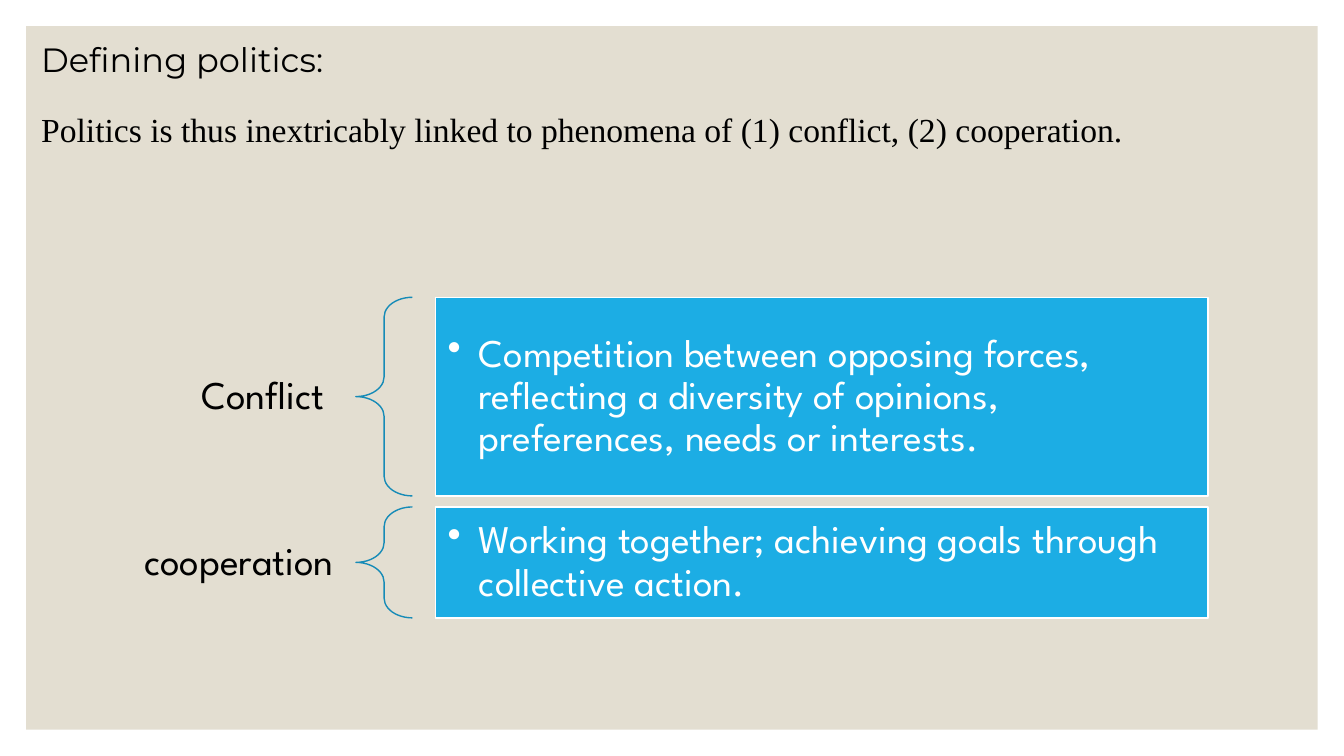
from dataclasses import dataclass

from lxml import etree
from pptx import Presentation
from pptx.dml.color import RGBColor
from pptx.enum.shapes import MSO_SHAPE
from pptx.enum.text import MSO_ANCHOR, PP_ALIGN
from pptx.oxml.ns import qn
from pptx.util import Inches, Pt

RECTANGLE, BRACE = MSO_SHAPE.RECTANGLE, MSO_SHAPE.LEFT_BRACE
MIDDLE, TOP = MSO_ANCHOR.MIDDLE, MSO_ANCHOR.TOP
LEFT, RIGHT = PP_ALIGN.LEFT, PP_ALIGN.RIGHT

TITLE = "Defining politics:"
STATEMENT = ("Politics is thus inextricably linked to phenomena of "
             "(1) conflict, (2) cooperation.")
# term, definition, row height in inches
DEFINITIONS = [
    ("Conflict ", "Competition between opposing forces, reflecting a diversity "
     "of opinions, preferences, needs or interests.", 1.97),
    ("cooperation", "Working together; achieving goals through collective action.", 1.1),
]


@dataclass(frozen=True)
class Theme:
    panel: str = "E3DED1"
    box: str = "1CADE4"
    brace: str = "168BB7"
    dark: str = "000000"
    light: str = "FFFFFF"
    title_font: str = "Montserrat"
    statement_font: str = "Times New Roman"
    list_font: str = "League Spartan"
    heading_size: int = 24
    list_size: int = 28
    line_width: int = 1


THEME = Theme()

PAGE_WIDTH, PAGE_HEIGHT = 13.33, 7.5
MARGIN = 0.26
HEADING_LEFT, HEADING_HEIGHT = 0.31, 0.5
TERM_LEFT, TERM_WIDTH, TERM_HEIGHT = 0.72, 2.81, 0.61
BRACE_LEFT, BRACE_WIDTH = TERM_LEFT + TERM_WIDTH, 0.56
BOX_LEFT, BOX_WIDTH = 4.32, 7.66
ROWS_TOP, ROW_GAP = 2.95, 0.11
BULLET_INDENT = 0.31


def add_outline(page, kind, area, fill=None, line=None):
    shape = page.shapes.add_shape(kind, *map(Inches, area))
    shape.shadow.inherit = False
    if fill:
        shape.fill.solid()
        shape.fill.fore_color.rgb = RGBColor.from_string(fill)
    else:
        shape.fill.background()
    if line:
        shape.line.color.rgb = RGBColor.from_string(line)
        shape.line.width = Pt(THEME.line_width)
    else:
        shape.line.fill.background()
    return shape


def write(shape, text, font, size, color, align=LEFT, anchor=TOP,
          insets=(0.1, 0.05), spacing=1.0):
    """Set one styled paragraph; insets are (side, top and bottom) in inches."""
    frame = shape.text_frame
    frame.word_wrap = True
    frame.vertical_anchor = anchor
    frame.margin_left = frame.margin_right = Inches(insets[0])
    frame.margin_top = frame.margin_bottom = Inches(insets[1])
    frame.text = text
    para = frame.paragraphs[0]
    para.alignment = align
    para.line_spacing = spacing
    span = para.runs[0].font
    span.name, span.size = font, Pt(size)
    span.color.rgb = RGBColor.from_string(color)
    return para


def add_bullet(para):
    properties = para._p.get_or_add_pPr()
    properties.set("marL", str(Inches(BULLET_INDENT)))
    properties.set("indent", str(-Inches(BULLET_INDENT)))
    etree.SubElement(properties, qn("a:buChar")).set("char", "•")


def add_heading(page, text, top, width, font):
    box = page.shapes.add_textbox(
        *map(Inches, (HEADING_LEFT, top, width, HEADING_HEIGHT)))
    write(box, text, font, THEME.heading_size, THEME.dark)


def add_definition(page, term, definition, top, height):
    term_top = top + (height - TERM_HEIGHT) / 2
    label = page.shapes.add_textbox(
        *map(Inches, (TERM_LEFT, term_top, TERM_WIDTH, TERM_HEIGHT)))
    write(label, term, THEME.list_font, THEME.list_size, THEME.dark,
          RIGHT, MIDDLE, (0.22, 0.08), 0.9)

    brace = add_outline(page, BRACE, (BRACE_LEFT, top, BRACE_WIDTH, height),
                        line=THEME.brace)
    brace.adjustments[0] = 0.35
    brace.adjustments[1] = 0.5

    box = add_outline(page, RECTANGLE, (BOX_LEFT, top, BOX_WIDTH, height),
                      THEME.box, THEME.light)
    add_bullet(write(box, definition, THEME.list_font, THEME.list_size,
                     THEME.light, LEFT, MIDDLE, (0.12, 0.12), 0.9))


def main():
    deck = Presentation()
    deck.slide_width, deck.slide_height = Inches(PAGE_WIDTH), Inches(PAGE_HEIGHT)
    page = deck.slides.add_slide(deck.slide_layouts[6])
    add_outline(page, RECTANGLE, (MARGIN, MARGIN, PAGE_WIDTH - 2 * MARGIN,
                                  PAGE_HEIGHT - 2 * MARGIN), THEME.panel)
    add_heading(page, TITLE, 0.34, 3.48, THEME.title_font)
    add_heading(page, STATEMENT, 1.03, 11.68, THEME.statement_font)
    top = ROWS_TOP
    for term, definition, height in DEFINITIONS:
        add_definition(page, term, definition, top, height)
        top += height + ROW_GAP
    deck.save("out.pptx")


if __name__ == "__main__":
    main()
